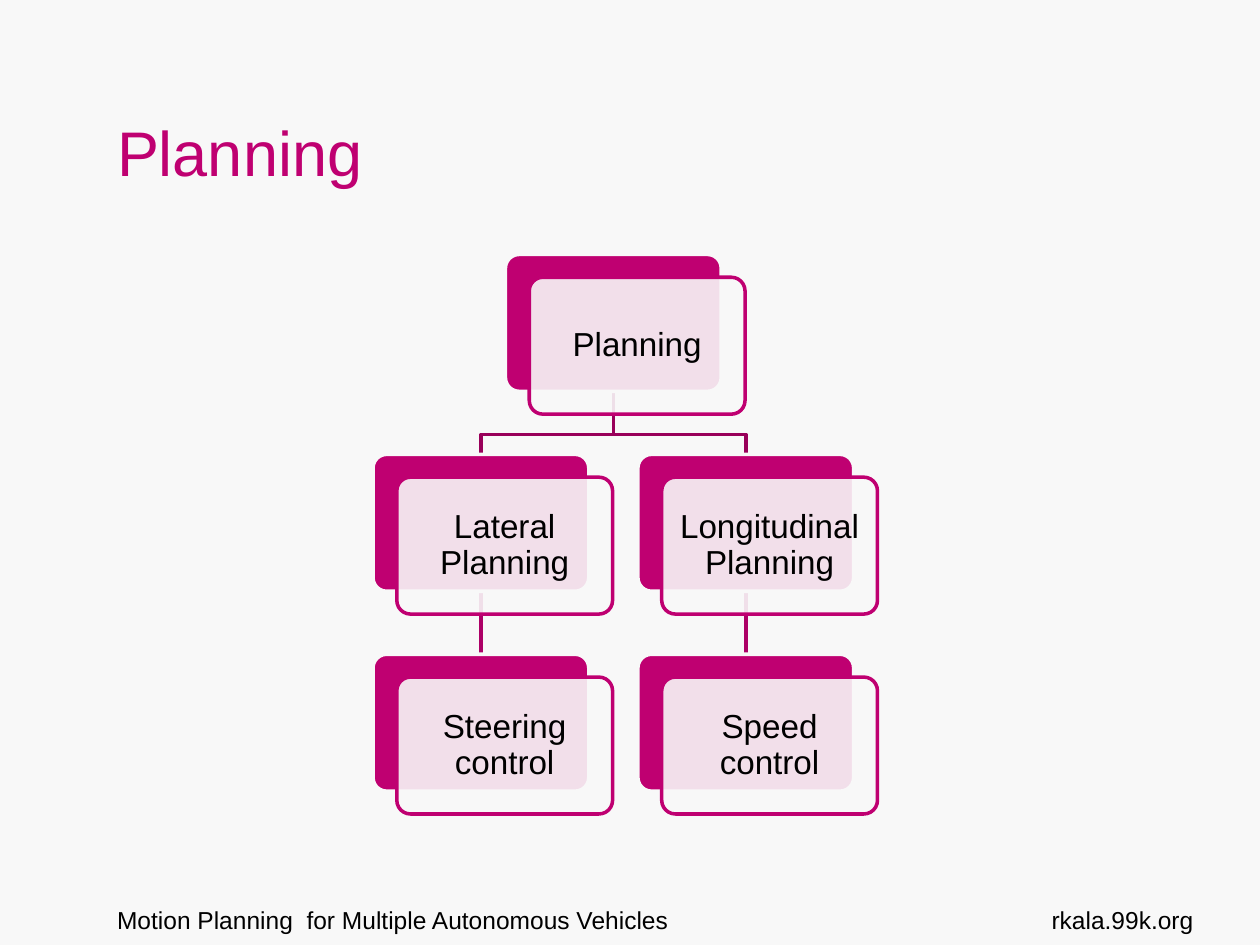
from lxml import etree
from pptx import Presentation
from pptx import util as u
from pptx.dml.color import RGBColor
from pptx.enum import shapes, text
from pptx.oxml.ns import qn

# Tree grid in cm: back card size, steps, and offset of the front card
LEFT, TOP = 7.52, 5.13
COL, ROW = 5.34, 4.03
WIDE, HIGH = 4.35, 2.76
DX, DY = 0.48, 0.46
BEND = 0.4


def tint(hexa):
    return RGBColor.from_string(hexa)


class Deck:
    font, paper, ink, pink = "Arial", "F8F8F8", "000000", "BF0071"
    stem, fork = "AD0067", "99005A"

    def __init__(self):
        self.show = Presentation()
        self.show.slide_width, self.show.slide_height = u.Cm(25.4), u.Cm(19.05)
        self.slide = self.show.slides.add_slide(self.show.slide_layouts[6])
        self.items = self.slide.shapes
        fill = self.slide.background.fill
        fill.solid()
        fill.fore_color.rgb = tint(self.paper)

    def put_text(self, frame, words, size, color, align):
        frame.word_wrap = True
        para = frame.paragraphs[0]
        para.text = words
        para.alignment = align
        para.font.name, para.font.size = self.font, u.Pt(size)
        para.font.color.rgb = tint(color)
        return para

    def label(self, box, words, size, color=ink, align=text.PP_ALIGN.LEFT,
              anchor=text.MSO_ANCHOR.TOP):
        frame = self.items.add_textbox(*map(u.Cm, box)).text_frame
        frame.vertical_anchor = anchor
        self.put_text(frame, words, size, color, align)

    def stroke(self, line, color):
        line.color.rgb = tint(color)
        line.width = u.Pt(2)

    def plate(self, x, y, fill, edge):
        plate = self.items.add_shape(shapes.MSO_SHAPE.ROUNDED_RECTANGLE,
                                     u.Cm(x), u.Cm(y), u.Cm(WIDE), u.Cm(HIGH))
        plate.adjustments[0] = 0.1
        plate.shadow.inherit = False
        plate.fill.solid()
        plate.fill.fore_color.rgb = tint(fill)
        self.stroke(plate.line, edge)
        return plate

    def card(self, col, row, words):
        x, y = LEFT + col * COL, TOP + row * ROW
        back = self.plate(x, y, self.pink, self.paper)
        front = self.plate(x + DX, y + DY, self.paper, self.pink)
        color = front._element.spPr.find(qn("a:solidFill"))[0]
        etree.SubElement(color, qn("a:alpha"), val="90000")
        frame = front.text_frame
        frame.margin_left = frame.margin_right = u.Cm(0.2)
        frame.margin_top = frame.margin_bottom = u.Cm(0.2)
        frame.vertical_anchor = text.MSO_ANCHOR.MIDDLE
        para = self.put_text(frame, words, 19, self.ink, text.PP_ALIGN.CENTER)
        para.line_spacing = 0.9
        return back

    def behind(self, item):
        self.items._spTree.insert(2, item._element)

    def link(self, top, low):
        line = self.items.add_connector(shapes.MSO_CONNECTOR.STRAIGHT, 0, 0, 0, 0)
        line.begin_connect(top, 2)
        line.end_connect(low, 0)
        self.stroke(line.line, self.stem)
        etree.SubElement(line._element.spPr, qn("a:effectLst"))
        self.behind(line)

    def branch(self, top, low):
        start, end = top.left + top.width // 2, low.left + low.width // 2
        bend = low.top - u.Cm(BEND)
        route = self.items.build_freeform(start, top.top + top.height)
        route.add_line_segments([(start, bend), (end, bend), (end, low.top)],
                                close=False)
        fork = route.convert_to_shape()
        fork.shadow.inherit = False
        fork.fill.background()
        self.stroke(fork.line, self.fork)
        self.behind(fork)


def main():
    deck = Deck()

    # Title
    deck.label((2.11, 0.76, 17.2, 3.18), "Planning", 36, deck.pink,
               anchor=text.MSO_ANCHOR.BOTTOM)

    # Planning tree
    root = deck.card(0.5, 0, "Planning")
    for col, (plan, control) in enumerate([
            ("Lateral Planning", "Steering control"),
            ("Longitudinal Planning", "Speed control")]):
        mid = deck.card(col, 1, plan)
        leaf = deck.card(col, 2, control)
        deck.branch(root, mid)
        deck.link(mid, leaf)

    # Footer
    deck.label((2.11, 18.11, 17.6, 1.32),
               "Motion Planning  for Multiple Autonomous Vehicles", 14)
    deck.label((20.5, 18.11, 3.81, 1.32), "rkala.99k.org", 14,
               align=text.PP_ALIGN.RIGHT)

    deck.show.save("out.pptx")


if __name__ == "__main__":
    main()
